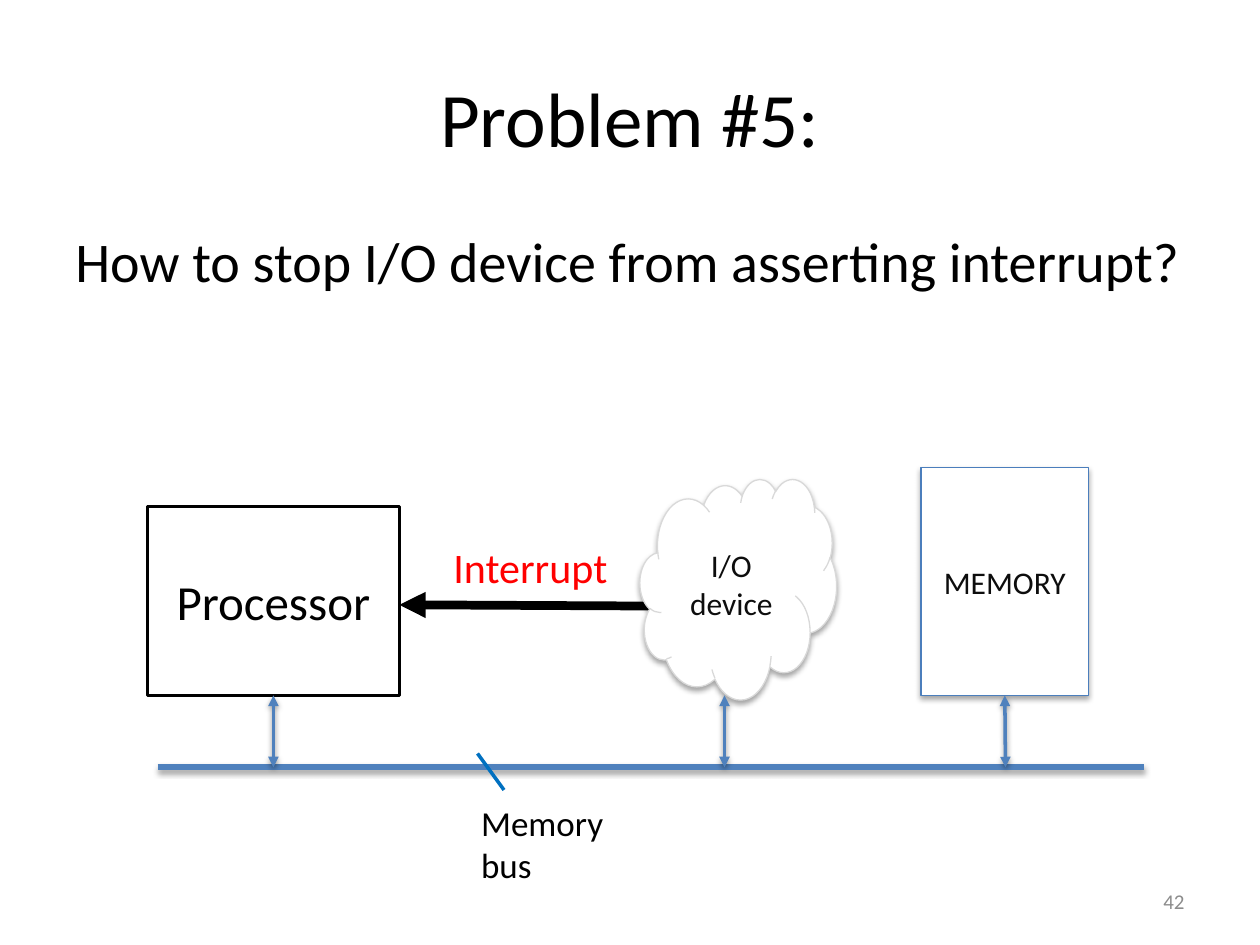
from lxml import etree
from pptx import Presentation, util as u
from pptx.dml.color import RGBColor
from pptx.enum import shapes, text
from pptx.oxml import ns

BLACK = RGBColor(0, 0, 0)
WHITE = RGBColor(0xFF, 0xFF, 0xFF)
INK = RGBColor(0x0D, 0x0D, 0x0D)
GRAY = RGBColor(0x8C, 0x8C, 0x8C)
PALE = RGBColor(0xD9, 0xD9, 0xD9)
RED = RGBColor(0xFF, 0, 0)
BUS_BLUE = RGBColor(0x4F, 0x81, 0xBD)
EDGE_BLUE = RGBColor(0x4B, 0x7E, 0xBC)
TICK_BLUE = RGBColor(0, 0x70, 0xC0)

BUS_Y = 6.09
BLOCK_BOTTOM = 5.52
SHAPE_SHADOW = (35, 1.8)  # opacity in percent, distance in points
LINE_SHADOW = (38, 1.6)


class Diagram:
    font = "Calibri"

    def __init__(self, slide):
        self.slide = slide

    def set_text(self, sp, words, size, color, align, anchor):
        tf = sp.text_frame
        tf.vertical_anchor = anchor
        p = tf.paragraphs[0]
        p.text = words
        p.alignment = align
        p.font.name, p.font.size = self.font, u.Pt(size)
        p.font.color.rgb = color

    def effects(self, sp, shadow):
        """Give the element a downward shadow, or an empty effect list."""
        sp_pr = sp._element.spPr
        for old in sp_pr.findall(ns.qn("a:effectLst")):
            sp_pr.remove(old)
        effects = etree.SubElement(sp_pr, ns.qn("a:effectLst"))
        if shadow:
            opacity, distance = shadow
            outer = etree.SubElement(
                effects, ns.qn("a:outerShdw"), blurRad=str(u.Pt(3.1)),
                dist=str(u.Pt(distance)), dir="5400000", rotWithShape="0")
            black = etree.SubElement(outer, ns.qn("a:srgbClr"), val="000000")
            etree.SubElement(black, ns.qn("a:alpha"), val=str(opacity * 1000))

    def title(self, words, box):
        sp = self.slide.shapes.title
        sp.left, sp.top, sp.width, sp.height = map(u.Inches, box)
        self.set_text(sp, words, 44, BLACK, text.PP_ALIGN.CENTER, text.MSO_ANCHOR.MIDDLE)

    def label(self, words, box, size, color=BLACK, align=text.PP_ALIGN.LEFT,
              anchor=text.MSO_ANCHOR.TOP, wrap=True):
        sp = self.slide.shapes.add_textbox(*map(u.Inches, box))
        sp.text_frame.word_wrap = wrap
        self.set_text(sp, words, size, color, align, anchor)

    def block(self, kind, words, box, size, color, edge, weight, shadow=None):
        sp = self.slide.shapes.add_shape(kind, *map(u.Inches, box))
        sp.fill.solid()
        sp.fill.fore_color.rgb = WHITE
        sp.line.color.rgb, sp.line.width = edge, u.Pt(weight)
        self.effects(sp, shadow)
        self.set_text(sp, words, size, color, text.PP_ALIGN.CENTER, text.MSO_ANCHOR.MIDDLE)
        return sp

    def line(self, start, end, color, weight, heads=(), shadow=None):
        cx = self.slide.shapes.add_connector(
            shapes.MSO_CONNECTOR.STRAIGHT, *map(u.Inches, start + end))
        cx.line.color.rgb, cx.line.width = color, u.Pt(weight)
        ln = cx.line._get_or_add_ln()
        for head in heads:
            etree.SubElement(ln, ns.qn(f"a:{head}"), type="triangle")
        self.effects(cx, shadow)
        return cx

    def bus_link(self, x, block=None):
        cx = self.line((x, BLOCK_BOTTOM), (x, BUS_Y), BUS_BLUE, 2,
                       ("headEnd", "tailEnd"), LINE_SHADOW)
        if block is not None:
            cx.begin_connect(block, 2)


def main():
    prs = Presentation()
    prs.slide_width, prs.slide_height = u.Inches(10), u.Inches(7.5)
    d = Diagram(prs.slides.add_slide(prs.slide_layouts[5]))
    rect, cloud = shapes.MSO_SHAPE.RECTANGLE, shapes.MSO_SHAPE.CLOUD

    d.title("Problem #5:", (0.5, 0.3, 9, 1.25))
    d.label("How to stop I/O device from asserting interrupt?", (0.5, 1.75, 9, 4.95), 32)
    d.label("42", (7.17, 6.95, 2.33, 0.4), 12, GRAY,
            text.PP_ALIGN.RIGHT, text.MSO_ANCHOR.MIDDLE)

    processor = d.block(rect, "Processor", (1.17, 4.02, 2, 1.5), 28, BLACK, BLACK, 2)
    d.line((3.17, 4.8), (5.17, 4.81), BLACK, 5, ("headEnd",))
    d.label("Interrupt", (3.5, 4.25, 1.44, 0.5), 24, RED, wrap=False)
    device = d.block(cloud, "I/O device", (5.08, 3.8, 1.56, 1.75), 18, INK, PALE, 0.75,
                     SHAPE_SHADOW)
    device.text_frame.margin_left = device.text_frame.margin_right = 0

    d.line((1.25, BUS_Y), (9.08, BUS_Y), BUS_BLUE, 3.5, shadow=LINE_SHADOW)
    d.bus_link(2.17, processor)
    d.bus_link(5.75)
    memory = d.block(rect, "MEMORY", (7.31, 3.71, 1.33, 1.81), 18, INK, EDGE_BLUE, 0.75,
                     SHAPE_SHADOW)
    d.bus_link(7.98, memory)
    d.label("Memory bus", (3.72, 6.31, 1.63, 0.44), 20, wrap=False)
    d.line((3.79, 5.98), (4, 6.27), TICK_BLUE, 2)

    prs.save("out.pptx")


if __name__ == "__main__":
    main()
